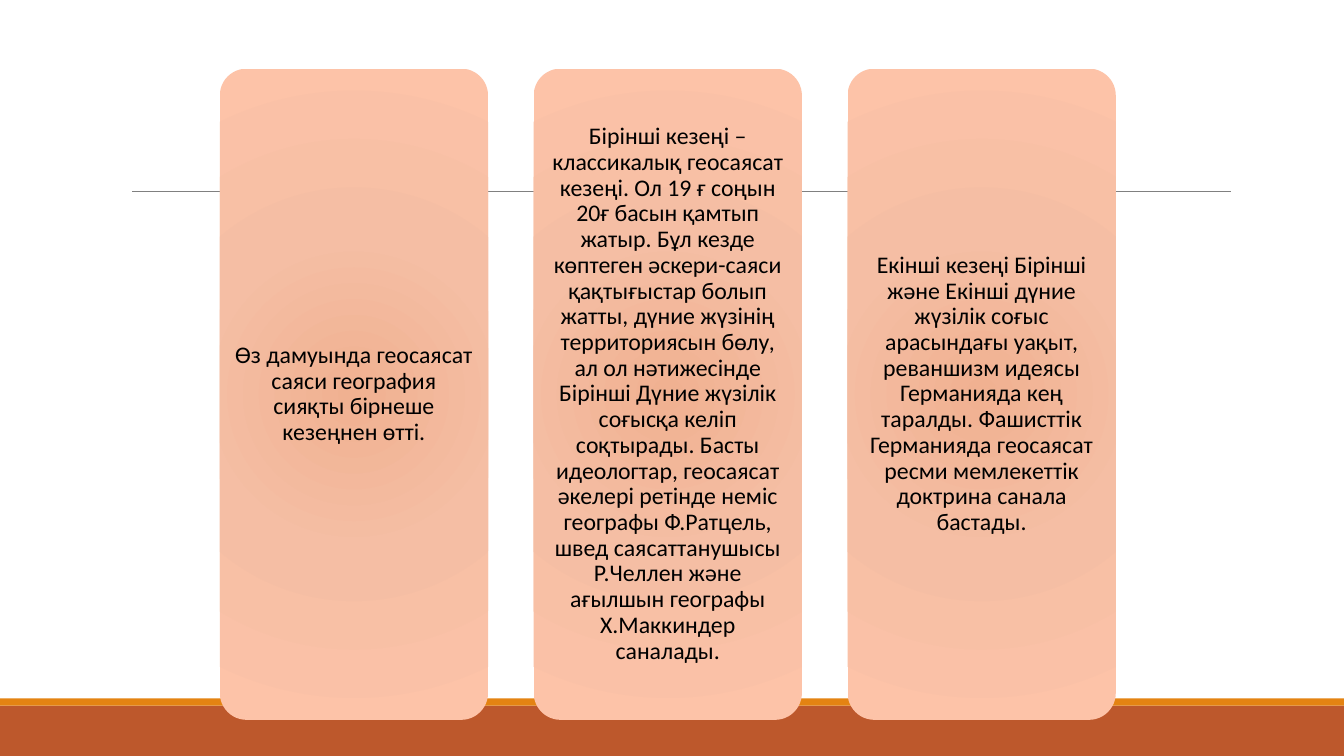
from dataclasses import dataclass

from pptx import Presentation
from pptx.dml.color import RGBColor
from pptx.enum.shapes import MSO_CONNECTOR, MSO_SHAPE
from pptx.enum.text import MSO_ANCHOR, PP_ALIGN
from pptx.oxml import parse_xml
from pptx.oxml.ns import nsdecls
from pptx.slide import Slide
from pptx.util import Cm, Pt

RECTANGLE, ROUNDED = MSO_SHAPE.RECTANGLE, MSO_SHAPE.ROUNDED_RECTANGLE
STRAIGHT = MSO_CONNECTOR.STRAIGHT
CENTER, MIDDLE = PP_ALIGN.CENTER, MSO_ANCHOR.MIDDLE

SLIDE_WIDTH, SLIDE_HEIGHT = 33.87, 19.05
CARD_LEFT, CARD_TOP, CARD_PITCH = 5.54, 1.73, 7.91
CARD_WIDTH, CARD_HEIGHT = 6.76, 16.41
CARD_INSET = Cm(0.18)
CARD_GRADIENT = [(0, "F0B191"), (45, "F5BEA4"), (100, "FDC3A8")]


@dataclass
class Band:
    top: float
    height: float
    color: str


BANDS = [Band(17.78, 1.27, "BD582C"), Band(17.6, 0.18, "E48312")]

STAGES = [
    "Өз дамуында геосаясат саяси география сияқты бірнеше кезеңнен өтті.",
    "Бірінші кезеңі – классикалық геосаясат кезеңі. Ол 19 ғ соңын 20ғ басын "
    "қамтып жатыр. Бұл кезде көптеген әскери-саяси қақтығыстар болып жатты, "
    "дүние жүзінің территориясын бөлу, ал ол нәтижесінде Бірінші Дүние жүзілік "
    "соғысқа келіп соқтырады. Басты идеологтар, геосаясат әкелері ретінде неміс "
    "географы Ф.Ратцель, швед саясаттанушысы Р.Челлен және ағылшын географы "
    "Х.Маккиндер саналады.",
    "Екінші кезеңі Бірінші және Екінші дүние жүзілік соғыс арасындағы уақыт, "
    "реваншизм идеясы Германияда кең таралды. Фашисттік Германияда геосаясат "
    "ресми мемлекеттік доктрина санала бастады.",
]


def rgb(color: str) -> RGBColor:
    return RGBColor.from_string(color)


def draw_band(slide: Slide, band: Band) -> None:
    strip = slide.shapes.add_shape(
        RECTANGLE, 0, Cm(band.top), Cm(SLIDE_WIDTH), Cm(band.height))
    strip.shadow.inherit = False
    strip.fill.solid()
    strip.fill.fore_color.rgb = rgb(band.color)
    strip.line.fill.background()


def draw_rule(slide: Slide) -> None:
    rule = slide.shapes.add_connector(
        STRAIGHT, Cm(3.33), Cm(4.83), Cm(31.01), Cm(4.83))
    rule.line.color.rgb = rgb("808080")
    rule.line.width = Pt(0.5)
    rule._element.spPr.append(parse_xml(f"<a:effectLst {nsdecls('a')}/>"))


def radial_fill(stops: list[tuple[int, str]]):
    stop_xml = "".join(
        f'<a:gs pos="{percent * 1000}"><a:srgbClr val="{color}"/></a:gs>'
        for percent, color in stops)
    return parse_xml(
        f'<a:gradFill {nsdecls("a")} rotWithShape="1"><a:gsLst>{stop_xml}</a:gsLst>'
        '<a:path path="circle"><a:fillToRect l="100000" t="100000" r="100000" '
        'b="100000"/></a:path></a:gradFill>')


def draw_stage(slide: Slide, index: int, text: str) -> None:
    card = slide.shapes.add_shape(
        ROUNDED, Cm(CARD_LEFT + index * CARD_PITCH), Cm(CARD_TOP),
        Cm(CARD_WIDTH), Cm(CARD_HEIGHT))
    card.adjustments[0] = 0.1
    card.shadow.inherit = False
    card.line.fill.background()
    card._element.spPr.prstGeom.addnext(radial_fill(CARD_GRADIENT))

    frame = card.text_frame
    frame.word_wrap = True
    frame.vertical_anchor = MIDDLE
    frame.margin_left = frame.margin_right = CARD_INSET
    frame.margin_top = frame.margin_bottom = CARD_INSET
    paragraph = frame.paragraphs[0]
    paragraph.text = text
    paragraph.alignment = CENTER
    paragraph.line_spacing = 0.9
    paragraph.font.name = "Calibri"
    paragraph.font.size = Pt(17)
    paragraph.font.color.rgb = rgb("000000")


def main() -> None:
    deck = Presentation()
    deck.slide_width, deck.slide_height = Cm(SLIDE_WIDTH), Cm(SLIDE_HEIGHT)
    slide = deck.slides.add_slide(deck.slide_layouts[6])

    # Footer bands and title rule
    for band in BANDS:
        draw_band(slide, band)
    draw_rule(slide)

    # Stages of geopolitics
    for index, text in enumerate(STAGES):
        draw_stage(slide, index, text)

    deck.save("out.pptx")


if __name__ == "__main__":
    main()
